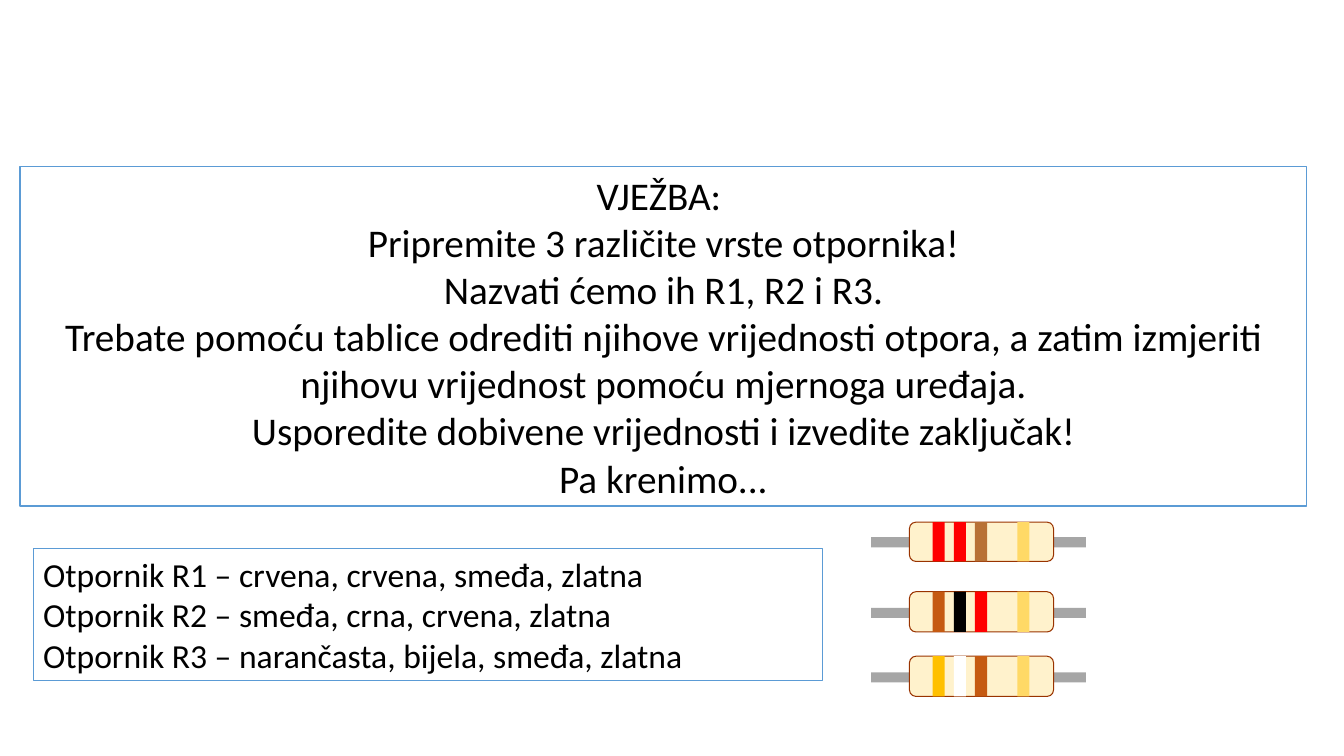
"""Build the resistor exercise slide."""
from dataclasses import dataclass

from pptx import Presentation
from pptx.dml.color import RGBColor
from pptx.enum.shapes import MSO_SHAPE
from pptx.enum.text import MSO_ANCHOR, PP_ALIGN
from pptx.shapes.autoshape import Shape
from pptx.util import Emu, Pt

RECTANGLE = MSO_SHAPE.RECTANGLE
ROUNDED = MSO_SHAPE.ROUNDED_RECTANGLE
MIDDLE = MSO_ANCHOR.MIDDLE
LEFT, CENTER = PP_ALIGN.LEFT, PP_ALIGN.CENTER

EMU_PER_PX = 9144
SLIDE_WIDTH, SLIDE_HEIGHT = 1333, 750
BLANK_LAYOUT = 6

WHITE, BLACK, BLUE = "FFFFFF", "000000", "5B9BD5"
RED, BROWN, LIGHT_BROWN = "FF0000", "C55A11", "B87136"
ORANGE, GOLD = "FFC000", "FFD966"
WIRE_GREY, BODY_CREAM, BODY_EDGE = "A6A6A6", "FFF2CC", "993300"

WIRE_HEIGHT = 10
LEFT_WIRE = (864, 52)
RIGHT_WIRE = (1045, 32)
BODY = (902, 143)
BODY_ROUNDING = 0.167
BAND_LEFTS = (925, 946, 967, 1009)
BAND_WIDTH = 12


@dataclass(frozen=True)
class Box:
    """A position and size in px."""

    left: int
    top: int
    width: int
    height: int


@dataclass(frozen=True)
class TextPanel:
    """A bordered box with one line of text per paragraph."""

    box: Box
    size: int
    alignment: PP_ALIGN
    lines: tuple[str, ...]


@dataclass(frozen=True)
class Resistor:
    """A resistor with its colour bands from left to right."""

    top: int
    height: int
    bands: tuple[str, ...]


PANELS = (
    TextPanel(Box(20, 165, 1276, 337), 28, CENTER, (
        "VJEŽBA: ",
        "Pripremite 3 različite vrste otpornika!",
        "Nazvati ćemo ih R1, R2 i R3.",
        "Trebate pomoću tablice odrediti njihove vrijednosti otpora, "
        "a zatim izmjeriti njihovu vrijednost pomoću mjernoga uređaja.",
        "Usporedite dobivene vrijednosti i izvedite zaključak!",
        "Pa krenimo...",
    )),
    TextPanel(Box(33, 544, 783, 131), 24, LEFT, (
        "Otpornik R1 – crvena, crvena, smeđa, zlatna",
        "Otpornik R2 – smeđa, crna, crvena, zlatna",
        "Otpornik R3 – narančasta, bijela, smeđa, zlatna",
    )),
)

RESISTORS = (
    Resistor(518, 39, (RED, RED, LIGHT_BROWN, GOLD)),
    Resistor(587, 40, (BROWN, BLACK, RED, GOLD)),
    Resistor(651, 40, (ORANGE, WHITE, BROWN, GOLD)),
)


def px(length: int) -> Emu:
    """Turn px into EMU."""
    return Emu(length * EMU_PER_PX)


def color(value: str) -> RGBColor:
    """Turn a hex string into a colour."""
    return RGBColor.from_string(value)


def draw_shape(shapes, kind: MSO_SHAPE, box: Box, fill: str,
               line: str = "", line_width: float = 1) -> Shape:
    """Draw a filled shape, outlined when a line colour is given."""
    shape = shapes.add_shape(kind, px(box.left), px(box.top),
                             px(box.width), px(box.height))
    shape.shadow.inherit = False
    shape.fill.solid()
    shape.fill.fore_color.rgb = color(fill)
    if line:
        shape.line.color.rgb = color(line)
        shape.line.width = Pt(line_width)
    else:
        shape.line.fill.background()
    return shape


def draw_panel(shapes, panel: TextPanel) -> None:
    """Draw a bordered box and write its paragraphs."""
    shape = draw_shape(shapes, RECTANGLE, panel.box, WHITE, BLUE)
    frame = shape.text_frame
    frame.word_wrap = True
    frame.vertical_anchor = MIDDLE
    frame.text = "\n".join(panel.lines)
    font_format = {"name": "Calibri", "size": Pt(panel.size)}
    for paragraph in frame.paragraphs:
        paragraph.alignment = panel.alignment
        for attribute, value in font_format.items():
            setattr(paragraph.font, attribute, value)
        paragraph.font.color.rgb = color(BLACK)


def draw_resistor(shapes, resistor: Resistor) -> None:
    """Draw a resistor as a group of wires, body and bands."""
    group = shapes.add_group_shape()
    top, height = resistor.top, resistor.height
    wire_top = top + (height - WIRE_HEIGHT) // 2 + 1
    for left, width in (LEFT_WIRE, RIGHT_WIRE):
        draw_shape(group.shapes, RECTANGLE,
                   Box(left, wire_top, width, WIRE_HEIGHT), WIRE_GREY)
    left, width = BODY
    body = draw_shape(group.shapes, ROUNDED, Box(left, top, width, height),
                      BODY_CREAM, BODY_EDGE, 0.75)
    body.adjustments[0] = BODY_ROUNDING
    for band_left, band in zip(BAND_LEFTS, resistor.bands):
        draw_shape(group.shapes, RECTANGLE,
                   Box(band_left, top, BAND_WIDTH, height), band)


def main() -> None:
    """Build and save the presentation."""
    presentation = Presentation()
    presentation.slide_width = px(SLIDE_WIDTH)
    presentation.slide_height = px(SLIDE_HEIGHT)
    slide = presentation.slides.add_slide(
        presentation.slide_layouts[BLANK_LAYOUT])
    for panel in PANELS:
        draw_panel(slide.shapes, panel)
    for resistor in RESISTORS:
        draw_resistor(slide.shapes, resistor)
    presentation.save("out.pptx")


if __name__ == "__main__":
    main()
